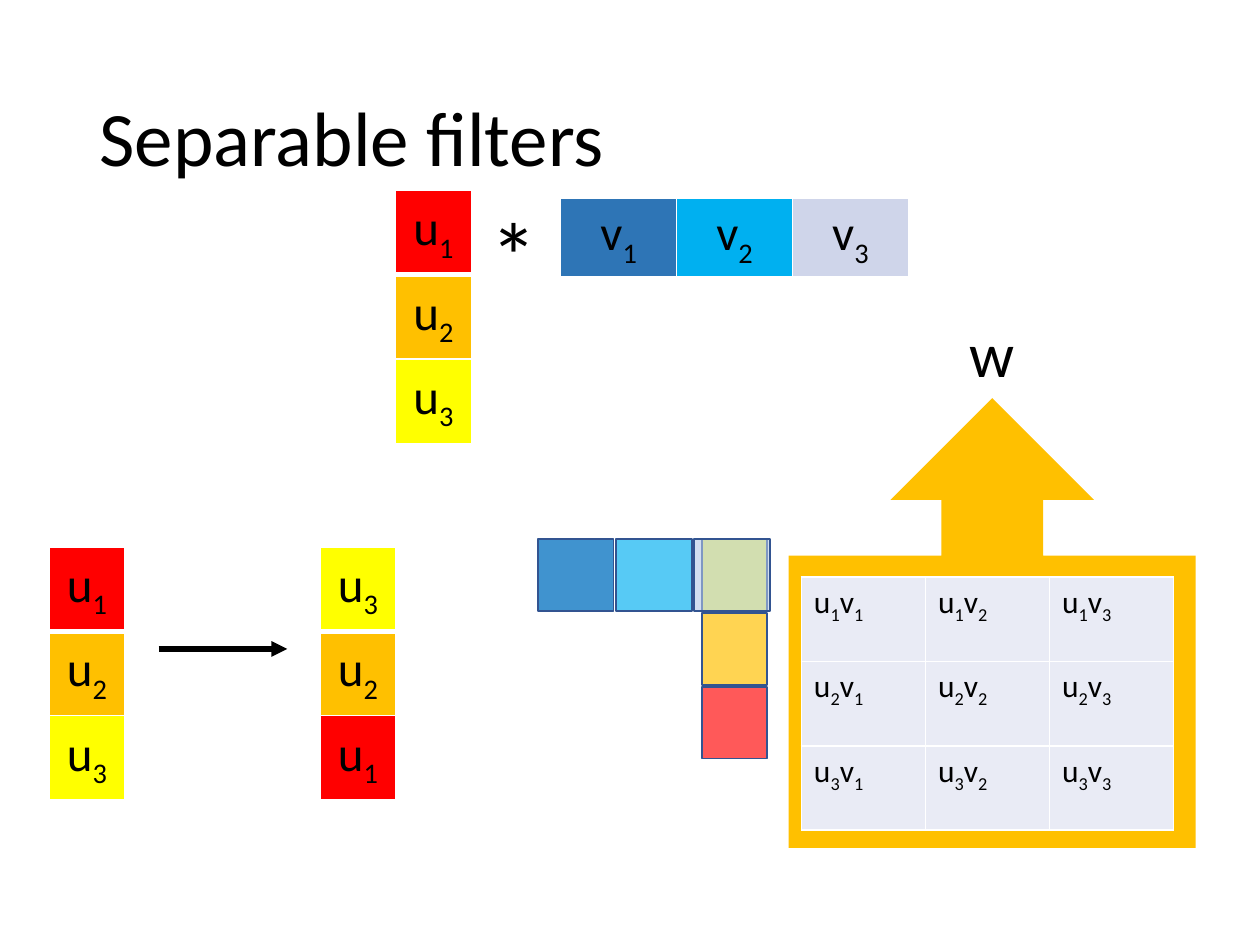
from itertools import groupby

from lxml import etree
from pptx import Presentation
from pptx import util as u
from pptx.dml.color import RGBColor
from pptx.enum import shapes, text
from pptx.oxml import parse_xml
from pptx.oxml.ns import nsdecls, qn

Inches, Pt = u.Inches, u.Pt
color = RGBColor.from_string
CENTER, MIDDLE = text.PP_ALIGN.CENTER, text.MSO_ANCHOR.MIDDLE


def write(frame, content, size, align=text.PP_ALIGN.LEFT):
    """Fill a text frame, setting every digit as a subscript."""
    paragraph = frame.paragraphs[0]
    paragraph.alignment = align
    for is_digit, letters in groupby(content, str.isdigit):
        run = paragraph.add_run()
        run.text = "".join(letters)
        run.font.size, run.font.name, run.font.bold = Pt(size), "Calibri", False
        run.font.color.rgb = color("000000")
        if is_digit:
            run._r.get_or_add_rPr().set("baseline", "-25000")
    return paragraph


def add_grid(labels, fills, left, top, column_width, row_height, size=28,
             align=CENTER, anchor=MIDDLE, first_rule=1):
    """Add a table with white rules; first_rule is the width under row one."""
    rows, columns = len(labels), len(labels[0])
    table = slide.shapes.add_table(
        rows, columns, Inches(left), Inches(top),
        Inches(column_width * columns), Inches(row_height * rows)).table
    table.first_row = table.horz_banding = False
    for column in table.columns:
        column.width = Inches(column_width)
    for r, row in enumerate(table.rows):
        row.height = Inches(row_height)
        for c, cell in enumerate(row.cells):
            widths = {"L": 1, "R": 1, "T": first_rule if r == 1 else 1,
                      "B": first_rule if r == 0 else 1}
            for side, width in widths.items():
                cell._tc.get_or_add_tcPr().append(parse_xml(
                    f'<a:ln{side} {nsdecls("a")} w="{Pt(width)}"><a:solidFill>'
                    f'<a:srgbClr val="FFFFFF"/></a:solidFill></a:ln{side}>'))
            cell.fill.solid()
            cell.fill.fore_color.rgb = color(fills[r][c])
            cell.vertical_anchor = anchor
            write(cell.text_frame, labels[r][c], size, align)


presentation = Presentation()
presentation.slide_width, presentation.slide_height = Inches(10), Inches(7.5)
slide = presentation.slides.add_slide(presentation.slide_layouts[5])

# Callout behind the product table
callout = slide.shapes.add_shape(shapes.MSO_SHAPE.UP_ARROW_CALLOUT, Inches(6.26),
                                 Inches(3.16), Inches(3.23), Inches(3.57))
callout.shadow.inherit = False
callout.fill.solid()
callout.fill.fore_color.rgb = color("FFC000")
callout.line.fill.background()

title = slide.shapes.title
title.left, title.top = Inches(0.69), Inches(0.4)
title.width, title.height = Inches(8.62), Inches(1.45)
title.text_frame.vertical_anchor = MIDDLE
write(title.text_frame, "Separable filters", 44).line_spacing = 0.9

# Column filter u (twice), its flipped version, and row filter v
u_fills = {"u1": "FF0000", "u2": "FFC000", "u3": "FFFF00"}
for left, top, order in [(3.14, 1.51, "123"), (0.39, 4.34, "123"), (2.54, 4.34, "321")]:
    labels = [[f"u{i}"] for i in order]
    fills = [[u_fills[label]] for label, in labels]
    add_grid(labels, fills, left, top, 0.6, 0.67, first_rule=3)
add_grid([["v1", "v2", "v3"]], [["2E75B6", "00B0F0", "CFD5EA"]], 4.45, 1.57, 0.92, 0.56)

arrow = slide.shapes.add_connector(shapes.MSO_CONNECTOR.STRAIGHT, Inches(1.26),
                                   Inches(5.15), Inches(2.28), Inches(5.15))
arrow.line.color.rgb = color("000000")
arrow.line.width = Pt(3)
etree.SubElement(arrow.line._get_or_add_ln(), qn("a:tailEnd"), type="triangle")
etree.SubElement(arrow._element.spPr, qn("a:effectLst"))

# Translucent filters overlapping at one corner: fill and opacity in percent
square_sets = [
    (5.57, 0, 0.585, 0.52, [("FFFF00", 61), ("FFC000", 68), ("FF0000", 65)]),
    (4.27, 0.62, 0, 0.6, [("0070C0", 75), ("00B0F0", 66), ("B4C7E7", 59)]),
]
for left, step_x, step_y, width, squares in square_sets:
    group = slide.shapes.add_group_shape()
    for i, (fill, opacity) in enumerate(squares):
        square = group.shapes.add_shape(
            shapes.MSO_SHAPE.RECTANGLE, Inches(left + i * step_x),
            Inches(4.28 + i * step_y), Inches(width), Inches(0.57))
        square.shadow.inherit = False
        square.fill.solid()
        square.fill.fore_color.rgb = color(fill)
        fill_color = square._element.spPr.find(qn("a:solidFill"))[0]
        etree.SubElement(fill_color, qn("a:alpha"), val=str(opacity * 1000))
        square.line.color.rgb = color("325491")
        square.line.width = Pt(1)

# Product of the two filters
add_grid([[f"u{i}v{j}" for j in (1, 2, 3)] for i in (1, 2, 3)], [["E9EBF5"] * 3] * 3,
         6.36, 4.58, 0.985, 0.67, size=18, align=text.PP_ALIGN.LEFT,
         anchor=text.MSO_ANCHOR.TOP)

for content, size, left, top, width, height, anchor in [
        ("*", 54, 3.74, 1.51, 0.68, 1.01, text.MSO_ANCHOR.TOP),
        ("w", 36, 7.16, 2.44, 1.42, 0.71, MIDDLE)]:
    box = slide.shapes.add_textbox(Inches(left), Inches(top), Inches(width), Inches(height))
    box.text_frame.word_wrap = True
    box.text_frame.vertical_anchor = anchor
    write(box.text_frame, content, size, CENTER)

presentation.save("out.pptx")
